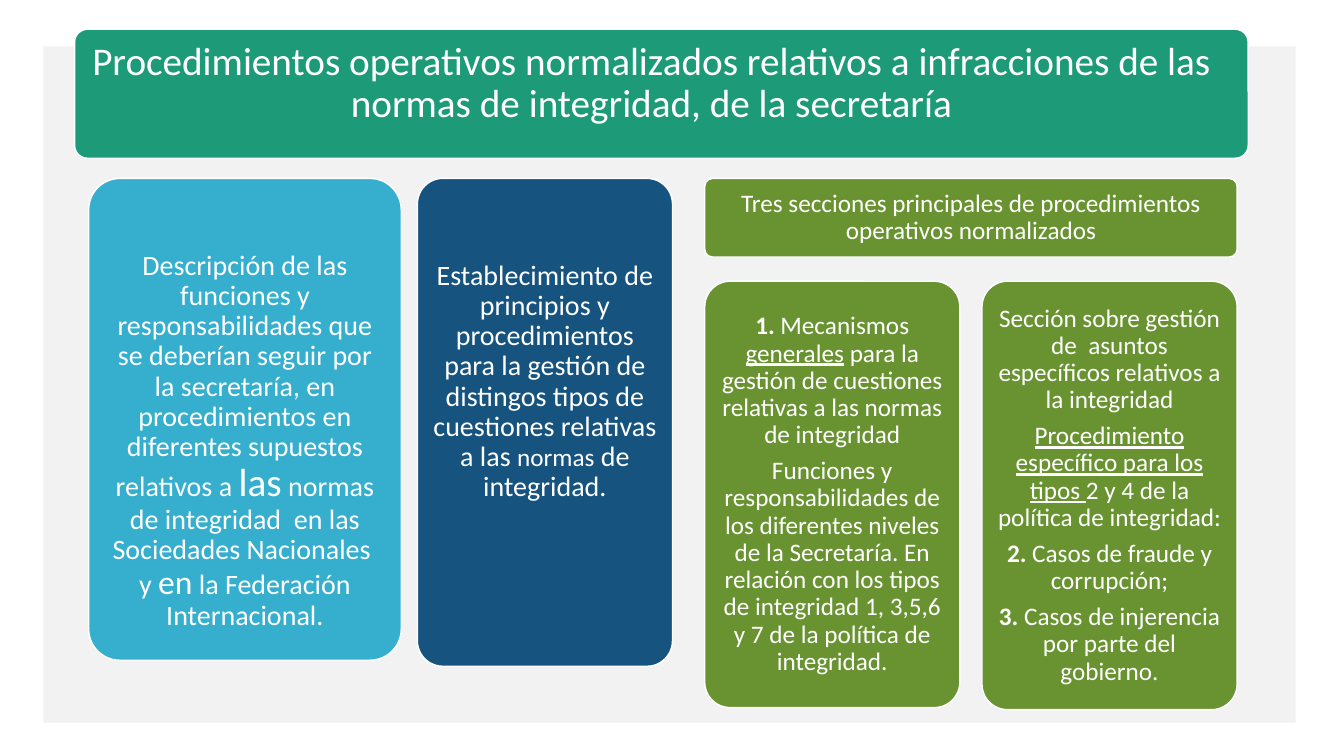
from pptx import Presentation
from pptx.dml.color import RGBColor
from pptx.enum.shapes import MSO_SHAPE
from pptx.enum.text import MSO_ANCHOR, PP_ALIGN
from pptx.util import Inches, Pt

COLORS = {
    "white": "FFFFFF",
    "panel": "F2F2F2",
    "title": "1D9A78",
    "roles": "36AFCE",
    "principles": "16537F",
    "sections": "699331",
}


def rgb(name):
    """Return the named colour."""
    return RGBColor.from_string(COLORS[name])


def add_run(p, text, size=18, bold=False, underline=False, color="white"):
    """Add a formatted run to a paragraph."""
    r = p.add_run()
    r.text = text
    f = r.font
    f.name = "Calibri"
    f.size = Pt(size)
    f.bold = bold
    f.underline = underline
    f.color.rgb = rgb(color)


def add_panel(s, x, y, w, h):
    """Draw the grey background panel."""
    sp = s.shapes.add_shape(MSO_SHAPE.RECTANGLE, Inches(x), Inches(y), Inches(w), Inches(h))
    sp.shadow.inherit = False
    sp.fill.solid()
    sp.fill.fore_color.rgb = rgb("panel")
    sp.line.fill.background()


def add_card(s, x, y, w, h, fill, paragraphs, size=18, insets=(0.07, 0.07, 0.07, 0.07)):
    """Draw a rounded card; each paragraph is a list of (text, format) runs."""
    sp = s.shapes.add_shape(MSO_SHAPE.ROUNDED_RECTANGLE, Inches(x), Inches(y), Inches(w), Inches(h))
    sp.adjustments[0] = 0.1
    sp.shadow.inherit = False
    sp.fill.solid()
    sp.fill.fore_color.rgb = rgb(fill)
    sp.line.color.rgb = rgb("white")
    sp.line.width = Pt(1)
    tf = sp.text_frame
    tf.word_wrap = True
    tf.vertical_anchor = MSO_ANCHOR.MIDDLE
    tf.margin_left, tf.margin_top, tf.margin_right, tf.margin_bottom = map(Inches, insets)
    for i, runs in enumerate(paragraphs):
        p = tf.add_paragraph() if i else tf.paragraphs[0]
        p.alignment = PP_ALIGN.CENTER
        p.line_spacing = 0.9
        p.space_after = Pt(0.35 * size)
        for text, style in runs:
            add_run(p, text, **{"size": size, **style})


def add_title(s, x, y, w, h):
    """Draw the title banner."""
    text = ("Procedimientos operativos normalizados relativos a infracciones de las "
            "normas de integridad, de la secretaría")
    add_card(s, x, y, w, h, "title", [[(text, {})]], size=28, insets=(0.04, 0, 0.24, 0.2))


def add_purposes(s, x, y, w, h):
    """Draw the two blue columns on the left."""
    roles = [
        ("Descripción de las funciones y responsabilidades que se deberían seguir por la "
         "secretaría, en procedimientos en diferentes supuestos relativos a ", {}),
        ("las", {"size": 28}),
        (" normas de integridad  en las Sociedades Nacionales  y ", {}),
        ("en", {"size": 24}),
        (" la Federación Internacional.", {}),
    ]
    principles = [
        ("Establecimiento de principios y procedimientos para la gestión de distingos "
         "tipos de cuestiones relativas a las ", {}),
        ("normas", {"size": 18}),
        (" de integridad.", {}),
    ]
    right_w = 2.53
    add_card(s, x, y, 3.1, h - 0.06, "roles", [roles], size=20,
             insets=(0.08, 0.52, 0.08, 0.08))
    add_card(s, x + w - right_w, y, right_w, h, "principles", [principles], size=20,
             insets=(0.08, 0.08, 0.08, 0.88))


def add_sections(s, x, y, w, h):
    """Draw the green heading with its two cards below."""
    bold, under = {"bold": True}, {"underline": True}
    heading = "Tres secciones principales de procedimientos operativos normalizados"
    general = [
        [("1.", bold), (" Mecanismos ", {}), ("generales", under),
         (" para la gestión de cuestiones relativas a las normas de integridad", {})],
        [("Funciones y responsabilidades de los diferentes niveles de la Secretaría. En "
          "relación con los tipos de integridad 1, 3,5,6 y 7 de la política de integridad.", {})],
    ]
    specific = [
        [("Sección sobre gestión de  asuntos específicos relativos a la integridad", {})],
        [("Procedimiento específico para los tipos ", under),
         ("2 y 4 de la política de integridad:", {})],
        [("2.", bold), (" Casos de fraude y corrupción;", {})],
        [("3.", bold), (" Casos de injerencia por parte del gobierno.", {})],
    ]
    card_w, card_y = 2.53, 1.02
    card_h = h - card_y
    add_card(s, x, y, w, 0.78, "sections", [[(heading, {})]])
    add_card(s, x, y + card_y, card_w, card_h - 0.02, "sections", general)
    add_card(s, x + w - card_w, y + card_y, card_w, card_h, "sections", specific)


def main():
    """Build and save the slide."""
    prs = Presentation()
    prs.slide_width, prs.slide_height = Inches(13.33), Inches(7.5)
    s = prs.slides.add_slide(prs.slide_layouts[6])
    add_panel(s, 0.43, 0.46, 12.42, 6.71)
    add_purposes(s, 0.88, 1.77, 5.79, 4.84)
    add_sections(s, 6.99, 1.77, 5.28, 5.27)
    add_title(s, 0.74, 0.29, 11.64, 1.28)
    prs.save("out.pptx")


if __name__ == "__main__":
    main()
